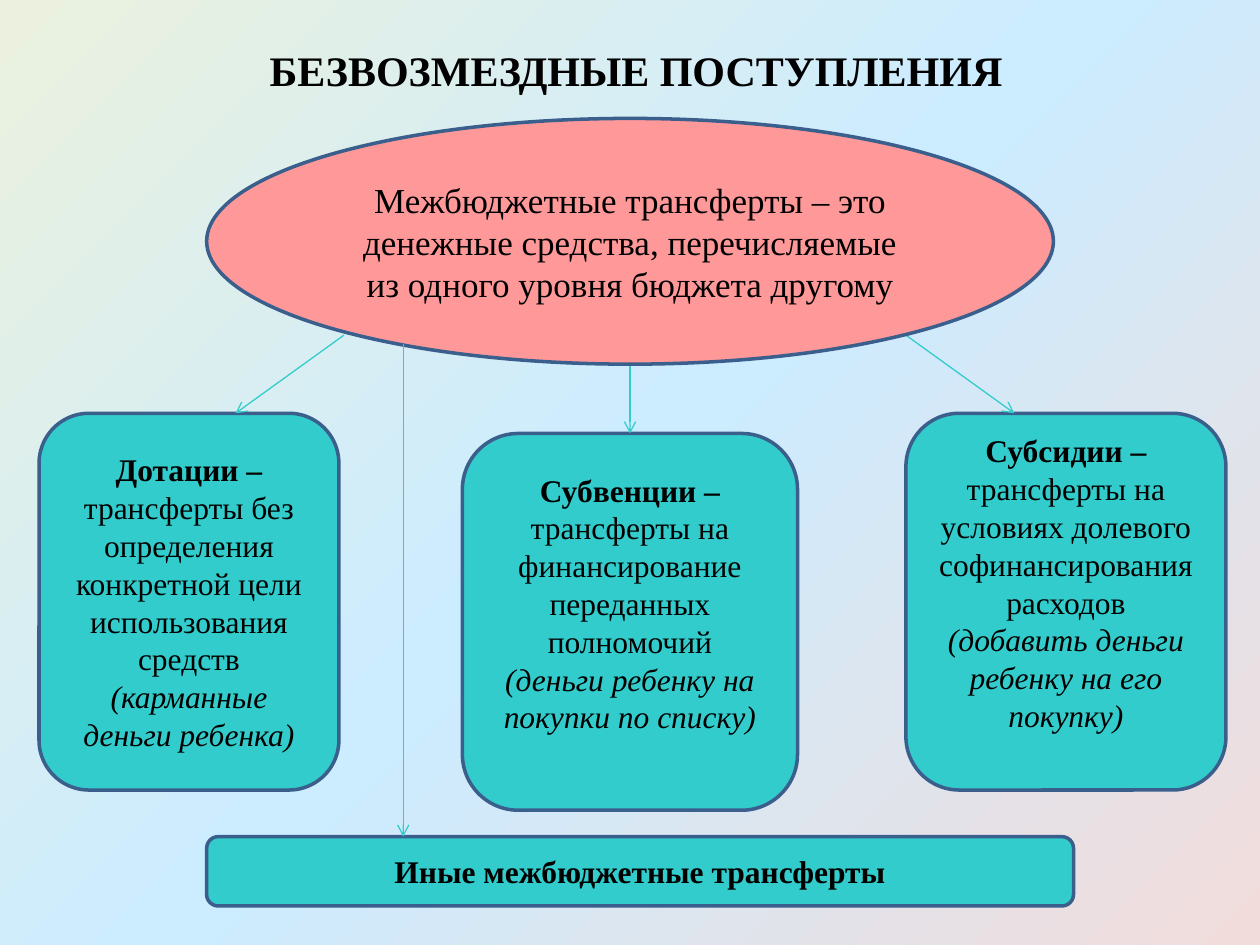
"""Builds a slide that explains the kinds of interbudget transfers."""
import pptx
import pptx.dml.color
import pptx.enum.shapes
import pptx.enum.text
import pptx.oxml.ns
import pptx.util
from lxml import etree

Inches = pptx.util.Inches
SHAPES = pptx.enum.shapes.MSO_SHAPE
COLORS = {
    "text": "000000",
    "card": "33CCCC",
    "ellipse": "FF9999",
    "outline": "3A5F8C",
    "rose": "F2DCDB",
    "sky": "CCECFF",
    "lime": "EBF1DE",
}
FONT = "Times New Roman"
CARD_TOP, CARD_HEIGHT = 3.28, 2.99
CARDS = [
    (0.31, CARD_TOP, 2.38, 0.05, "Дотации – ",
     "трансферты без определения конкретной цели использования средств",
     "(карманные деньги ребенка)"),
    (3.67, 3.44, 2.66, 0.35, "Субвенции –",
     "трансферты на финансирование переданных полномочий",
     "(деньги ребенку на покупки по списку)"),
    (7.19, CARD_TOP, 2.54, 0.35, "Субсидии – ",
     "трансферты на условиях долевого софинансирования расходов",
     "(добавить деньги ребенку на его покупку)"),
]
ARROWS = [
    (2.73, 2.66, 1.87, CARD_TOP),
    (5, 2.89, 5, 3.44),
    (7.19, 2.66, 8.05, CARD_TOP),
]


def color(name):
    return pptx.dml.color.RGBColor.from_string(COLORS[name])


def add_element(parent, tag, **attributes):
    return etree.SubElement(parent, pptx.oxml.ns.qn(tag), **attributes)


def paint_background(page):
    page.background.fill.gradient()
    gradient = page.element.find(".//" + pptx.oxml.ns.qn("a:gradFill"))
    gradient.clear()
    stops = add_element(gradient, "a:gsLst")
    for position, name in ((0, "rose"), (50000, "sky"), (100000, "lime")):
        stop = add_element(stops, "a:gs", pos=str(position))
        add_element(stop, "a:srgbClr", val=COLORS[name])
    circle = add_element(gradient, "a:path", path="circle")
    add_element(circle, "a:fillToRect", l="100000", t="100000")


def write_paragraph(para, spans, size, bold=None, italic=None):
    para.alignment = pptx.enum.text.PP_ALIGN.CENTER
    para.font.name = FONT
    para.font.size = pptx.util.Pt(size)
    para.font.color.rgb = color("text")
    para.font.bold = bold
    para.font.italic = italic
    for text in spans:
        para.add_run().text = text


def prepare_frame(box):
    frame = box.text_frame
    frame.word_wrap = True
    frame.vertical_anchor = pptx.enum.text.MSO_ANCHOR.MIDDLE
    return frame


def add_title(page, text):
    box = page.shapes.add_textbox(Inches(0.55), Inches(0.23), Inches(9), Inches(0.64))
    write_paragraph(prepare_frame(box).paragraphs[0], [text], 24, bold=True)


def add_panel(page, kind, left, top, width, height, fill):
    panel = page.shapes.add_shape(kind, Inches(left), Inches(top), Inches(width), Inches(height))
    panel.shadow.inherit = False
    panel.fill.solid()
    panel.fill.fore_color.rgb = color(fill)
    panel.line.color.rgb = color("outline")
    panel.line.width = pptx.util.Pt(2)
    return prepare_frame(panel)


def add_card(page, left, top, width, bottom_margin, term, meaning, example):
    frame = add_panel(page, SHAPES.FLOWCHART_ALTERNATE_PROCESS,
                      left, top, width, CARD_HEIGHT, "card")
    frame.margin_bottom = Inches(bottom_margin)
    definition = frame.paragraphs[0]
    write_paragraph(definition, [term, meaning], 18)
    definition.runs[0].font.bold = True
    write_paragraph(frame.add_paragraph(), [example], 18, italic=True)


def add_arrow(page, *ends):
    arrow = page.shapes.add_connector(
        pptx.enum.shapes.MSO_CONNECTOR.STRAIGHT, *map(Inches, ends))
    arrow.line.color.rgb = color("card")
    arrow.line.width = pptx.util.Pt(0.75)
    add_element(arrow.line._get_or_add_ln(), "a:tailEnd", type="arrow")
    add_element(arrow.element.spPr, "a:effectLst")


def main():
    deck = pptx.Presentation()
    deck.slide_width, deck.slide_height = Inches(10), Inches(7.5)
    page = deck.slides.add_slide(deck.slide_layouts[6])
    paint_background(page)
    add_title(page, "БЕЗВОЗМЕЗДНЫЕ ПОСТУПЛЕНИЯ")
    for card in CARDS:
        add_card(page, *card)
    for ends in ARROWS:
        add_arrow(page, *ends)
    frame = add_panel(page, SHAPES.OVAL, 1.64, 0.94, 6.72, 1.95, "ellipse")
    write_paragraph(
        frame.paragraphs[0],
        ["Межбюджетные трансферты – это денежные средства, "
         "перечисляемые из одного уровня бюджета другому"], 20)
    frame = add_panel(page, SHAPES.FLOWCHART_ALTERNATE_PROCESS, 1.64, 6.64, 6.88, 0.55, "card")
    write_paragraph(frame.paragraphs[0], ["Иные межбюджетные трансферты"], 18, bold=True)
    add_arrow(page, 3.2, 2.73, 3.2, 6.64)
    deck.save("out.pptx")


if __name__ == "__main__":
    main()
